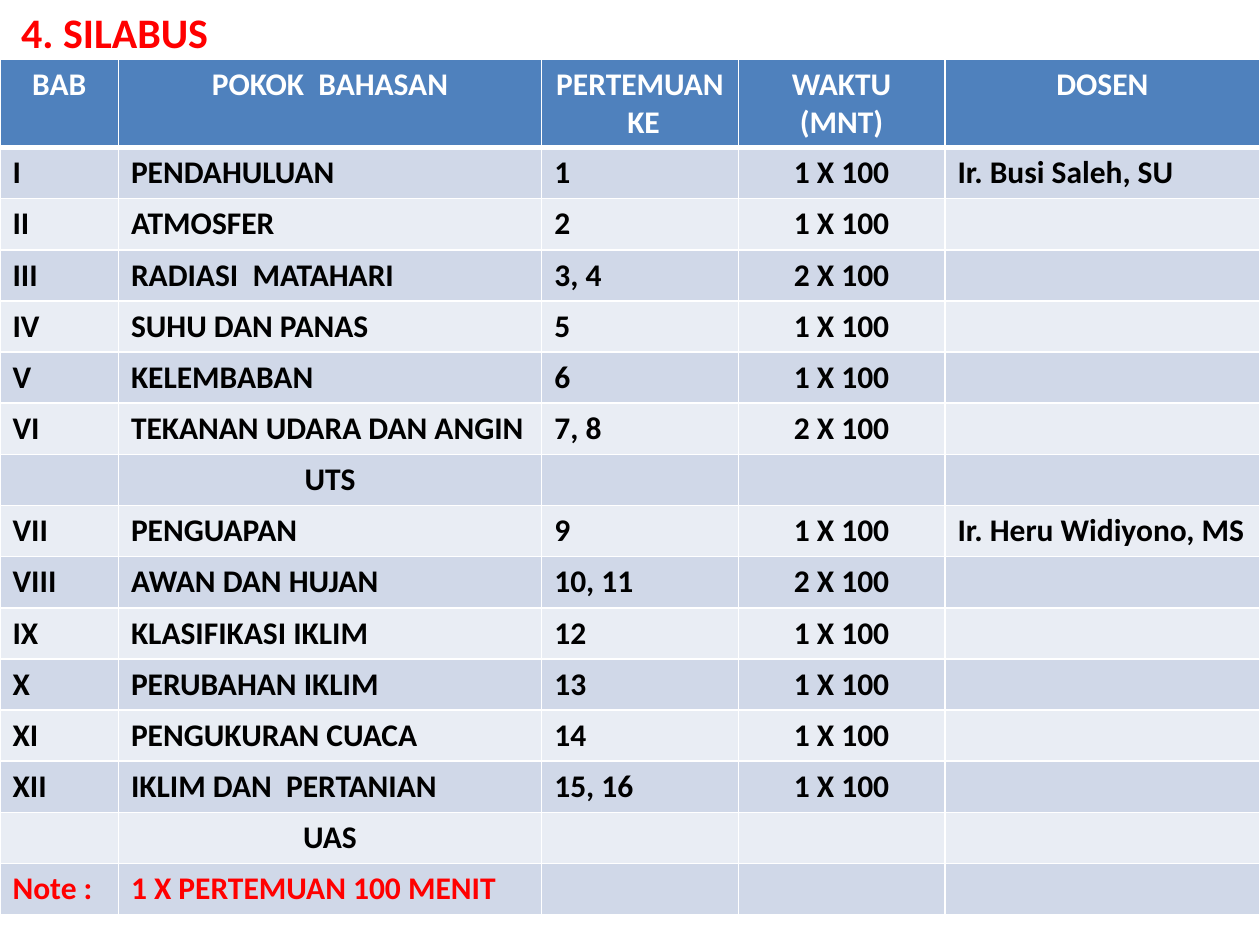
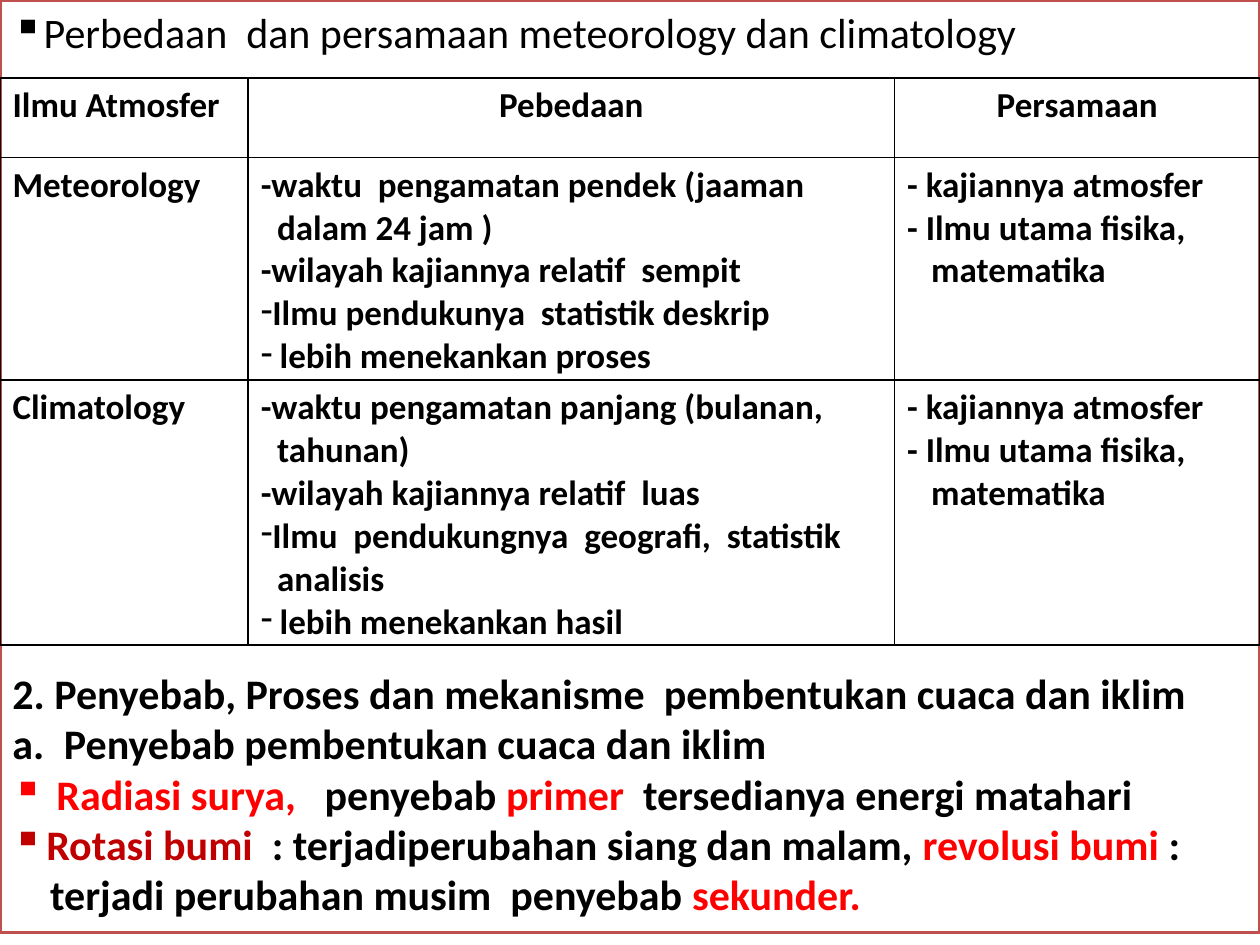
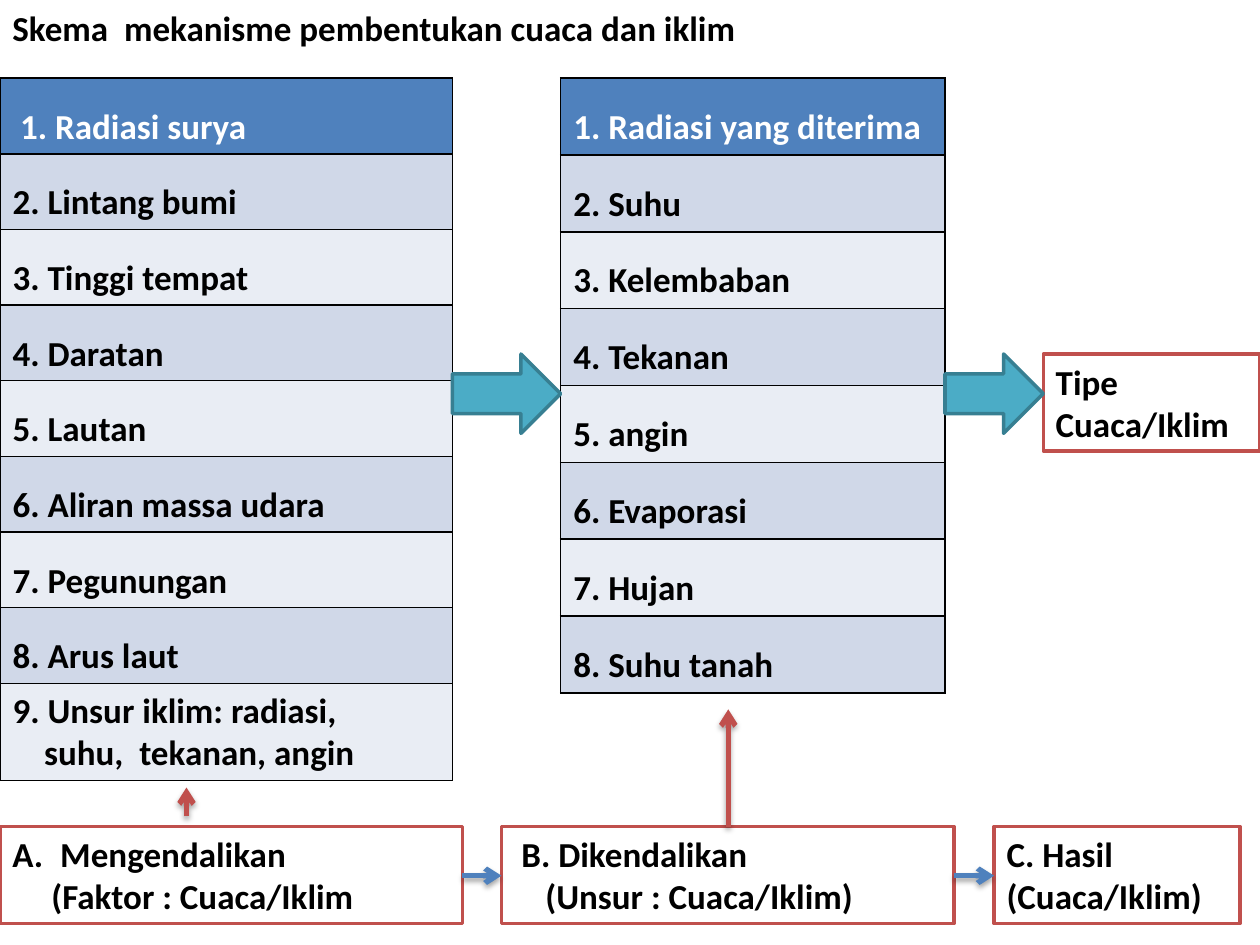
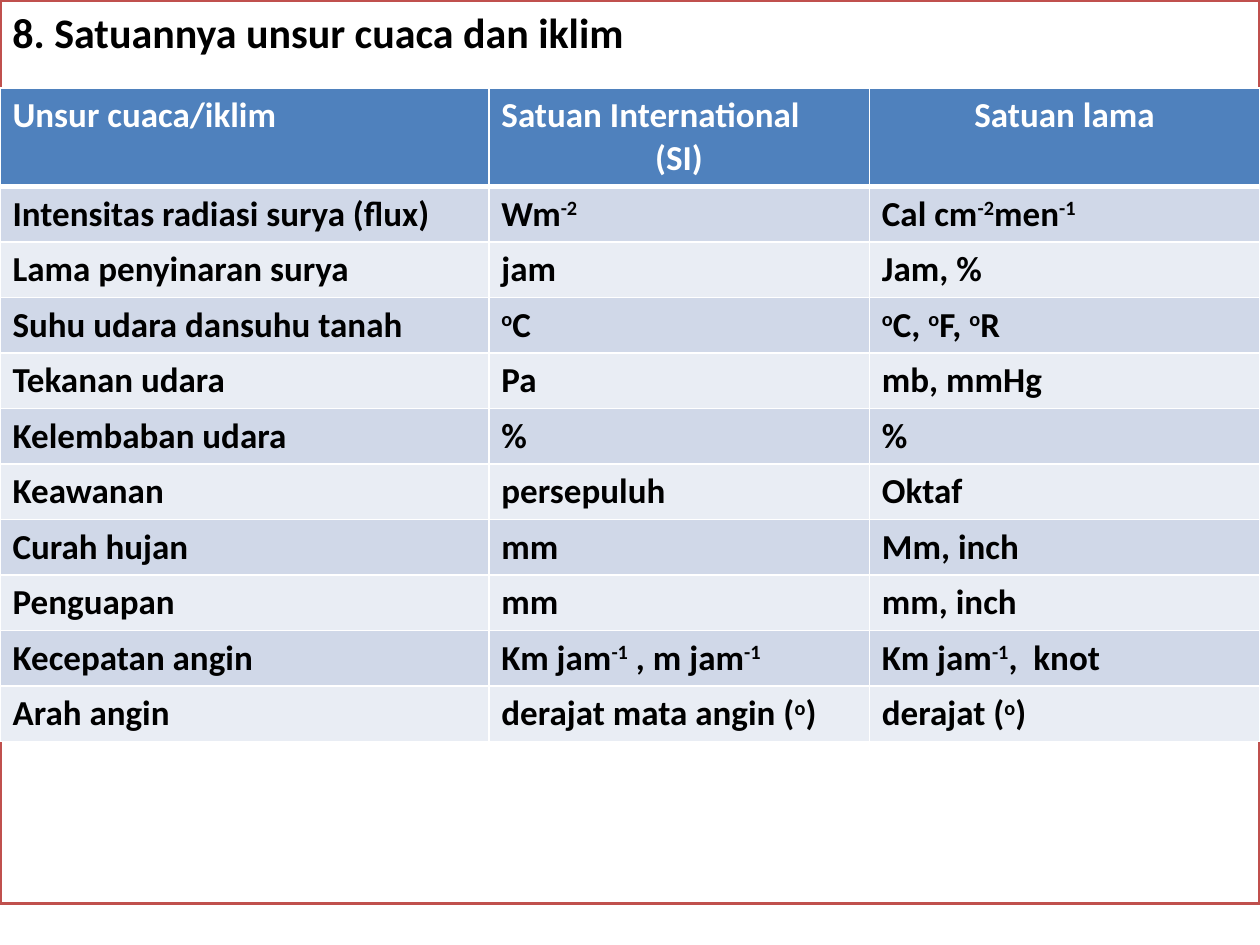
from dataclasses import dataclass

from lxml.etree import SubElement
from pptx import Presentation
from pptx.dml.color import RGBColor
from pptx.enum.shapes import MSO_CONNECTOR, MSO_SHAPE
from pptx.enum.text import MSO_ANCHOR, PP_ALIGN
from pptx.oxml.ns import qn
from pptx.util import Inches, Pt

# Shared look
FONT = "Calibri"
BLACK, WHITE, RED, DARK_RED = "000000", "FFFFFF", "FF0000", "C00000"
BLUE, BAND_DARK, BAND_LIGHT = "4F81BD", "D0D8E8", "E9EDF4"
FRAME_RED, TEAL, TEAL_DARK = "C0504D", "4BACC6", "377F92"
LEFT, CENTER = PP_ALIGN.LEFT, PP_ALIGN.CENTER
SQUARE = "▪"
TITLE_SIZE = 24


@dataclass
class Line:
    """One paragraph: runs are texts or (text, colour); ^...^ is superscript."""
    runs: tuple
    align: PP_ALIGN = None
    indent: float = 0
    hanging: bool = False
    bullet: str = None
    number: str = None
    before: float = 0
    spacing: float = None
    bold: bool = True


def line(*runs, **options):
    return Line(runs, **options)


def as_lines(content):
    """Accept a text, a line or a list of either."""
    items = content if isinstance(content, list) else [content]
    return [item if isinstance(item, Line) else line(item) for item in items]


# Basic elements
def colour(value):
    return RGBColor.from_string(value)


def add_bullet(paragraph, item):
    properties = paragraph._p.get_or_add_pPr()
    if item.indent:
        properties.set("marL", str(Inches(item.indent)))
        if item.bullet or item.number:
            properties.set("indent", str(-Inches(item.indent)))
    if item.number:
        SubElement(properties, qn("a:buAutoNum"), type=item.number)
    elif item.bullet:
        SubElement(properties, qn("a:buChar"), char=item.bullet)


def add_run(paragraph, text, size, text_colour, bold, raised):
    run = paragraph.add_run()
    run.text = text
    run.font.name = FONT
    run.font.size = Pt(size)
    run.font.bold = bold
    run.font.color.rgb = colour(text_colour)
    if raised:
        run._r.get_or_add_rPr().set("baseline", "30000")


def write(frame, content, size, text_colour=BLACK, align=LEFT):
    for index, item in enumerate(as_lines(content)):
        paragraph = frame.add_paragraph() if index else frame.paragraphs[0]
        paragraph.alignment = align if item.align is None else item.align
        if item.spacing:
            paragraph.line_spacing = item.spacing
        if item.before:
            paragraph.space_before = Pt(item.before)
        add_bullet(paragraph, item)
        for run in item.runs:
            text, run_colour = run if isinstance(run, tuple) else (run, text_colour)
            for part, piece in enumerate(text.split("^")):
                if piece:
                    add_run(paragraph, piece, size, run_colour, item.bold, part % 2 == 1)


def add_text(slide, left, top, width, height, content, size):
    box = slide.shapes.add_textbox(*map(Inches, (left, top, width, height)))
    box.text_frame.word_wrap = True
    write(box.text_frame, content, size)


def add_shape(slide, kind, left, top, width, height, fill, outline):
    shape = slide.shapes.add_shape(kind, *map(Inches, (left, top, width, height)))
    shape.shadow.inherit = False
    shape.fill.solid()
    shape.fill.fore_color.rgb = colour(fill)
    shape.line.color.rgb = colour(outline)
    shape.line.width = Pt(2)
    return shape


def add_box(slide, left, top, width, height, content, size=20):
    """White box with a red outline and text from the top left."""
    shape = add_shape(slide, MSO_SHAPE.RECTANGLE, left, top, width, height, WHITE, FRAME_RED)
    shape.text_frame.word_wrap = True
    shape.text_frame.vertical_anchor = MSO_ANCHOR.TOP
    write(shape.text_frame, content, size)


def add_block_arrow(slide, left, width):
    add_shape(slide, MSO_SHAPE.RIGHT_ARROW, left, 2.81, width, 0.63, TEAL, TEAL_DARK)


def add_arrow(slide, start, end, line_colour):
    connector = slide.shapes.add_connector(MSO_CONNECTOR.STRAIGHT, *map(Inches, start + end))
    connector.line.color.rgb = colour(line_colour)
    connector.line.width = Pt(3)
    SubElement(connector.line._get_or_add_ln(), qn("a:tailEnd"), type="arrow")
    # Soft shadow straight below the line
    effects = SubElement(connector._element.spPr, qn("a:effectLst"))
    shadow = SubElement(effects, qn("a:outerShdw"), blurRad=str(Pt(3.1)), dist=str(Pt(1.8)),
                        dir="5400000", rotWithShape="0")
    tint = SubElement(shadow, qn("a:srgbClr"), val=BLACK)
    SubElement(tint, qn("a:alpha"), val="35000")


# Tables
def set_borders(cell, border, top=1, bottom=1):
    properties = cell._tc.get_or_add_tcPr()
    for side, width in (("L", 1), ("R", 1), ("T", top), ("B", bottom)):
        edge = SubElement(properties, qn(f"a:ln{side}"), w=str(Pt(width)))
        fill = SubElement(edge, qn("a:solidFill"))
        SubElement(fill, qn("a:srgbClr"), val=border)


def add_table(slide, left, top, widths, heights, rows, size=20, border=WHITE,
              banded=True, header_rule=1, aligns=None):
    """Grid of cells; banded ones have a blue header and two tints in turn."""
    frame = slide.shapes.add_table(len(rows), len(widths), Inches(left), Inches(top),
                                   Inches(sum(widths)), Inches(sum(heights)))
    table = frame.table
    table.first_row = table.horz_banding = False
    for column, width in zip(table.columns, widths):
        column.width = Inches(width)
    for row, height in zip(table.rows, heights):
        row.height = Inches(height)
    aligns = aligns or [LEFT] * len(widths)
    for r, row in enumerate(rows):
        for c, content in enumerate(row):
            cell = table.cell(r, c)
            set_borders(cell, border, header_rule if r == 1 else 1, header_rule if r == 0 else 1)
            if banded:
                cell.fill.solid()
                fill = BLUE if r == 0 else (BAND_LIGHT, BAND_DARK)[r % 2]
                cell.fill.fore_color.rgb = colour(fill)
            else:
                cell.fill.background()
            if content:
                text_colour = WHITE if banded and r == 0 else BLACK
                write(cell.text_frame, content, size, text_colour, aligns[c])


def centered(text):
    return line(text, align=CENTER)


# Slide 1: syllabus
def build_syllabus(slide):
    add_text(slide, 0.07, 0, 9.93, 3.53, line(("4. SILABUS", RED)), TITLE_SIZE)
    chapters = [
        ("I", "PENDAHULUAN", "1", "1 X 100", "Ir. Busi Saleh, SU"),
        ("II", "ATMOSFER", "2", "1 X 100", ""),
        ("III", "RADIASI  MATAHARI", "3, 4", "2 X 100", ""),
        ("IV", "SUHU DAN PANAS", "5", "1 X 100", ""),
        ("V", "KELEMBABAN", "6", "1 X 100", ""),
        ("VI", "TEKANAN UDARA DAN ANGIN", "7, 8", "2 X 100", ""),
        ("", centered("UTS"), "", "", ""),
        ("VII", "PENGUAPAN", "9", "1 X 100", "Ir. Heru Widiyono, MS"),
        ("VIII", "AWAN DAN HUJAN", "10, 11", "2 X 100", ""),
        ("IX", "KLASIFIKASI IKLIM", "12", "1 X 100", ""),
        ("X", "PERUBAHAN IKLIM", "13", "1 X 100", ""),
        ("XI", "PENGUKURAN CUACA", "14", "1 X 100", ""),
        ("XII", "IKLIM DAN  PERTANIAN", "15, 16", "1 X 100", ""),
        ("", centered("UAS"), "", "", ""),
        (("Note :", RED), ("1 X PERTEMUAN 100 MENIT", RED), "", "", ""),
    ]
    titles = ("BAB", "POKOK  BAHASAN", "PERTEMUAN  KE", "WAKTU (MNT)", "DOSEN")
    header = [centered(title) for title in titles]
    add_table(slide, 0, 0.47, [0.94, 3.36, 1.56, 1.64, 2.5],
              [0.69] + [6.09 / len(chapters)] * len(chapters), [header] + chapters,
              size=18, header_rule=3, aligns=[LEFT, LEFT, LEFT, CENTER, LEFT])


# Slide 2: meteorology and climatology
def build_comparison(slide):
    add_box(slide, 0, 0, 10, 7.4, [
        line("Perbedaan  dan persamaan meteorology dan climatology",
             bullet=SQUARE, indent=0.19, bold=False),
        line("2. Penyebab, Proses dan mekanisme  pembentukan cuaca dan iklim", before=349),
        line("Penyebab pembentukan cuaca dan iklim", number="alphaLcPeriod", indent=0.41),
        line(("Radiasi surya,  ", RED), " penyebab ", ("primer", RED),
             "  tersedianya energi matahari", bullet=SQUARE, indent=0.35),
        line(("Rotasi bumi ", DARK_RED), " : terjadiperubahan siang dan malam, ",
             ("revolusi bumi ", RED), ":", bullet=SQUARE, indent=0.27),
        line("terjadi perubahan musim  penyebab ", ("sekunder.", RED), indent=0.3),
    ], TITLE_SIZE)

    def dash(text, indent):
        return line(text, bullet="-", indent=indent)

    similarities = ["- kajiannya atmosfer", "- Ilmu utama fisika,", line("matematika", indent=0.19)]
    rows = [
        ("Ilmu Atmosfer", centered("Pebedaan"), centered("Persamaan")),
        ("Meteorology", [
            "-waktu  pengamatan pendek (jaaman",
            line("dalam 24 jam )", indent=0.13),
            "-wilayah kajiannya relatif  sempit",
            dash("Ilmu pendukunya  statistik deskrip", 0.09),
            dash("lebih menekankan proses", 0.15),
        ], similarities),
        ("Climatology", [
            "-waktu pengamatan panjang (bulanan,",
            line("tahunan)", indent=0.13),
            "-wilayah kajiannya relatif  luas",
            dash("Ilmu  pendukungnya  geografi,  statistik", 0.09),
            line("analisis", indent=0.13),
            dash("lebih menekankan hasil", 0.15),
        ], similarities),
    ]
    add_table(slide, 0, 0.62, [1.97, 5.13, 2.9], [0.63, 1.76, 2.1], rows,
              border=BLACK, banded=False)


# Slide 3: how weather and climate form
def build_mechanism(slide):
    def spaced(text, indent=0):
        return line(text, spacing=1.5, indent=indent)

    def numbered(texts):
        return [(spaced(f"{number}. {text}"),) for number, text in enumerate(texts, 1)]

    factors = numbered(["Radiasi surya", "Lintang bumi", "Tinggi tempat", "Daratan", "Lautan",
                        "Aliran massa udara", "Pegunungan", "Arus laut"])
    factors[0] = (spaced("1. Radiasi surya", indent=0.06),)
    last = ["9. Unsur iklim: radiasi,", line("suhu,  tekanan, angin", indent=0.25)]
    add_table(slide, 0, 0.62, [3.59], [0.6] * len(factors) + [0.77], factors + [(last,)],
              border=BLACK)

    elements = numbered(["Radiasi yang diterima", "Suhu", "Kelembaban", "Tekanan", "angin",
                         "Evaporasi", "Hujan", "Suhu tanah"])
    add_table(slide, 4.45, 0.62, [3.05], [0.61] * len(elements), elements, border=BLACK)

    add_text(slide, 0, 0, 6.09, 0.44, "Skema  mekanisme pembentukan cuaca dan iklim", 20)

    # Flow from factors to elements to the resulting type
    add_block_arrow(slide, 3.59, 0.86)
    add_box(slide, 8.28, 2.81, 1.72, 0.77, ["Tipe", "Cuaca/Iklim"])
    add_block_arrow(slide, 7.5, 0.78)

    # Legend along the bottom
    legend = [
        (0, 3.67, [line("Mengendalikan", number="alphaUcPeriod", indent=0.38),
                   line("(Faktor : Cuaca/Iklim", indent=0.31)]),
        (3.98, 3.59, [line("B. Dikendalikan", indent=0.06),
                      line("(Unsur : Cuaca/Iklim)", indent=0.25)]),
        (7.89, 1.95, ["C. Hasil", "(Cuaca/Iklim)"]),
    ]
    for left, width, content in legend:
        add_box(slide, left, 6.56, width, 0.77, content)
    add_arrow(slide, (1.48, 6.48), (1.48, 6.25), FRAME_RED)
    add_arrow(slide, (5.78, 6.56), (5.78, 5.63), FRAME_RED)
    for (left, width, _), (next_left, _, _) in zip(legend, legend[1:]):
        add_arrow(slide, (left + width, 6.95), (next_left, 6.95), BLUE)


# Slide 4: units
def build_units(slide):
    add_box(slide, 0, 0, 10, 7.17, "8. Satuannya unsur cuaca dan iklim", TITLE_SIZE)
    rows = [
        ("Unsur cuaca/iklim", ["Satuan International", centered("(SI)")],
         centered("Satuan lama")),
        ("Intensitas radiasi surya (flux)", "Wm^-2^", "Cal cm^-2^men^-1^"),
        ("Lama penyinaran surya", "jam", "Jam, %"),
        ("Suhu udara dansuhu tanah", "^o^C", "^o^C, ^o^F, ^o^R"),
        ("Tekanan udara", "Pa", "mb, mmHg"),
        ("Kelembaban udara", "%", "%"),
        ("Keawanan", "persepuluh", "Oktaf"),
        ("Curah hujan", "mm", "Mm, inch"),
        ("Penguapan", "mm", "mm, inch"),
        ("Kecepatan angin", "Km jam^-1^ , m jam^-1^", "Km jam^-1^,  knot"),
        ("Arah angin", "derajat mata angin (^o^)", "derajat (^o^)"),
    ]
    body = len(rows) - 1
    add_table(slide, 0, 0.7, [3.88, 3.02, 3.1], [0.76] + [4.34 / body] * body, rows,
              header_rule=3)


def main():
    presentation = Presentation()
    presentation.slide_width = Inches(10)
    presentation.slide_height = Inches(7.5)
    blank = presentation.slide_layouts[6]
    for build in (build_syllabus, build_comparison, build_mechanism, build_units):
        build(presentation.slides.add_slide(blank))
    presentation.save("out.pptx")


if __name__ == "__main__":
    main()
